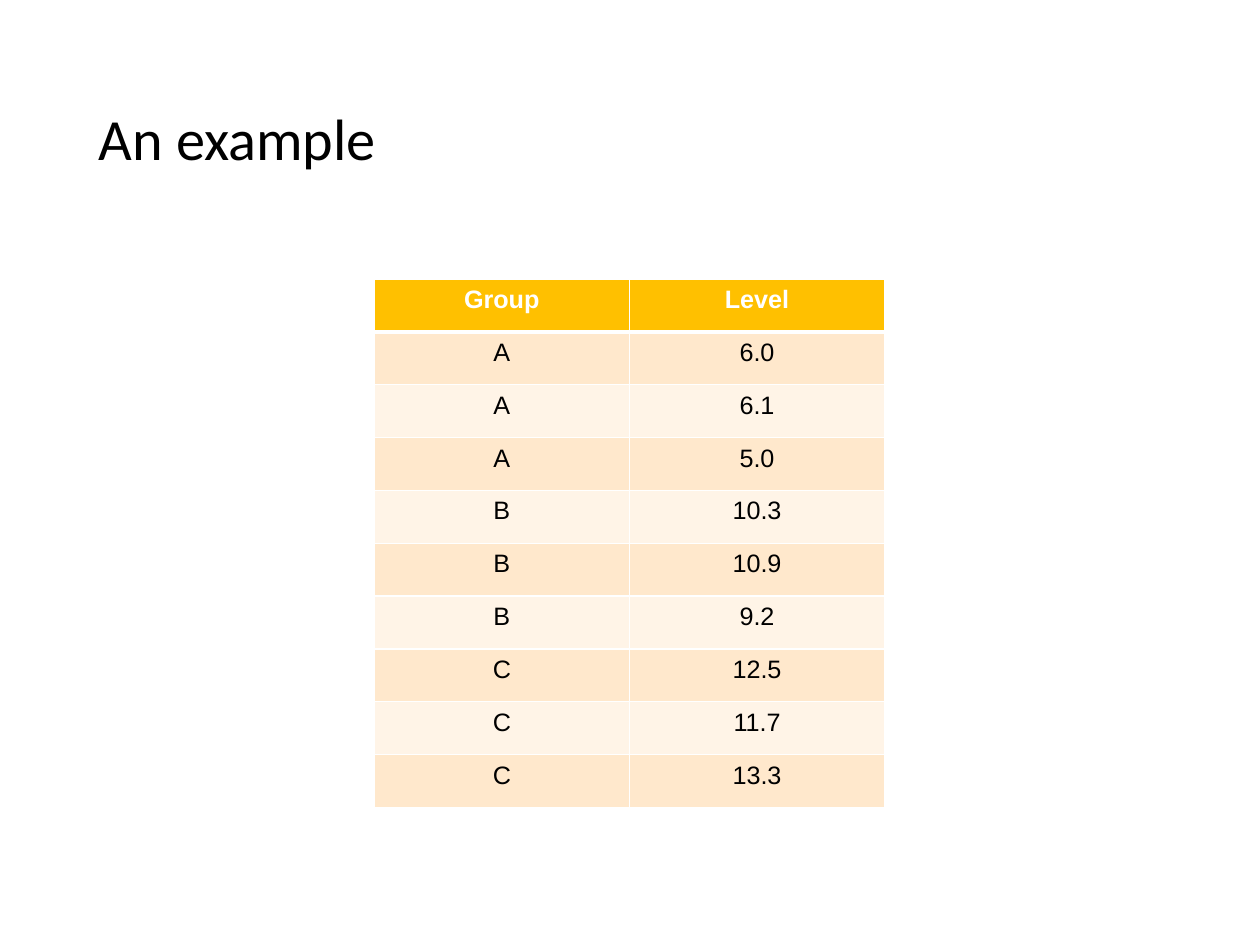
from dataclasses import dataclass
from typing import Any

from lxml.etree import SubElement
from pptx import Presentation
from pptx.dml.color import RGBColor
from pptx.enum.text import MSO_ANCHOR, PP_ALIGN
from pptx.oxml.ns import qn
from pptx.util import Inches, Pt

HUES = {
    "ink": "000000",
    "white": "FFFFFF",
    "head": "FFC000",
    "dark": "FFE8CC",
    "light": "FFF4E7",
}
LEVELS = {
    "A": ("6.0", "6.1", "5.0"),
    "B": ("10.3", "10.9", "9.2"),
    "C": ("12.5", "11.7", "13.3"),
}
TITLE = {
    "left": Inches(0.76),
    "top": Inches(0.44),
    "width": Inches(9.58),
    "height": Inches(1.61),
}
FRAME = {
    "vertical_anchor": MSO_ANCHOR.MIDDLE,
    "margin_left": Inches(0.11),
    "margin_right": Inches(0.11),
    "margin_top": Inches(0.11),
    "margin_bottom": Inches(0.11),
    "word_wrap": True,
}
CELL = {
    "vertical_anchor": MSO_ANCHOR.TOP,
    "margin_left": Inches(0.11),
    "margin_right": Inches(0.11),
    "margin_top": Inches(0.06),
    "margin_bottom": Inches(0.06),
}


@dataclass
class Row:
    texts: tuple[str, str]
    fill: str
    ink: str = "ink"
    bold: bool = False
    above: float = 1
    below: float = 1


def apply(item: Any, form: dict[str, Any]) -> None:
    for name, value in form.items():
        setattr(item, name, value)


def color(name: str) -> RGBColor:
    return RGBColor.from_string(HUES[name])


def write(par: Any, text: str, hue: str, form: dict[str, Any]) -> None:
    run = par.add_run()
    run.text = text
    apply(run.font, form)
    run.font.color.rgb = color(hue)


def border(cell: Any, row: Row) -> None:
    props = cell._tc.get_or_add_tcPr()
    sides = {"lnL": 1, "lnR": 1, "lnT": row.above, "lnB": row.below}
    for side, width in sides.items():
        line = SubElement(props, qn(f"a:{side}"), w=str(Pt(width)))
        fill = SubElement(line, qn("a:solidFill"))
        SubElement(fill, qn("a:srgbClr"), val=HUES["white"])


def draw_row(cells: Any, row: Row) -> None:
    font = {"name": "Arial", "size": Pt(16), "bold": row.bold}
    for cell, text in zip(cells, row.texts):
        apply(cell, CELL)
        border(cell, row)
        cell.fill.solid()
        cell.fill.fore_color.rgb = color(row.fill)
        par = cell.text_frame.paragraphs[0]
        par.alignment = PP_ALIGN.CENTER
        write(par, text, row.ink, font)


def draw_title(title: Any, text: str) -> None:
    apply(title, TITLE)
    apply(title.text_frame, FRAME)
    par = title.text_frame.paragraphs[0]
    apply(par, {"alignment": PP_ALIGN.LEFT, "line_spacing": 0.9})
    write(par, text, "ink", {"name": "Calibri", "size": Pt(37)})


def draw_table(slide: Any, rows: list[Row]) -> None:
    size = len(rows)
    table = slide.shapes.add_table(
        size, 2, Inches(3.3), Inches(2.46), Inches(4.5), Inches(4.66)
    ).table
    for line, row in zip(table.rows, rows):
        draw_row(line.cells, row)


def main() -> None:
    deck = Presentation()
    apply(deck, {"slide_width": Inches(11.11), "slide_height": Inches(8.33)})
    slide = deck.slides.add_slide(deck.slide_layouts[5])
    draw_title(slide.shapes.title, "An example")

    pairs = [(group, level) for group, levels in LEVELS.items() for level in levels]
    rows = [Row(("Group", "Level"), "head", "white", True, below=3)]
    for i, pair in enumerate(pairs):
        rows.append(Row(pair, "light" if i % 2 else "dark", above=1 if i else 3))
    draw_table(slide, rows)
    deck.save("out.pptx")


if __name__ == "__main__":
    main()
